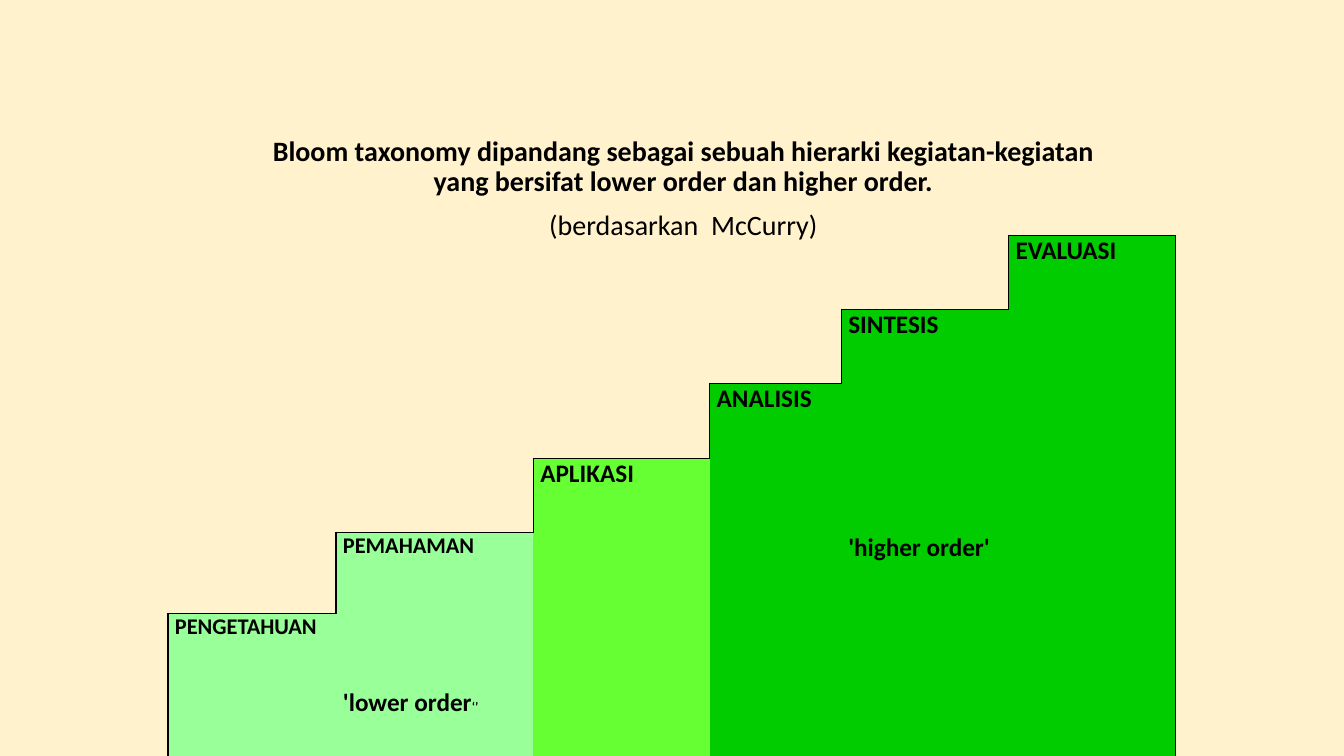
"""Build the slide that shows Bloom's taxonomy as a staircase table."""
import dataclasses

import lxml.etree
import pptx
import pptx.dml.color
import pptx.enum.text
import pptx.oxml.ns
import pptx.util

Pt = pptx.util.Pt
HUES = {"back": "FFF2CC", "ink": "000000", "pale": "99FF99",
        "lime": "66FF33", "green": "00CC00"}
TINTS = ["pale", "pale", "lime", "green", "green", "green"]
WIDTHS = [120, 141, 126, 94, 119.5, 119.5]
HEIGHTS = [53.1, 53.1, 53.1, 53.1, 57.8, 53.1, 53.1]
SIDES = {"lnL": (0, -1), "lnR": (0, 1), "lnT": (-1, 0), "lnB": (1, 0)}
HEAD = ("Bloom taxonomy dipandang sebagai sebuah hierarki kegiatan-kegiatan "
        "yang bersifat lower order dan higher order.")
CREDIT = "(berdasarkan  McCurry)"


@dataclasses.dataclass
class Label:
    row: int
    col: int
    text: str
    size: float = 18
    tail: str = ""


LABELS = [
    Label(0, 5, "EVALUASI"),
    Label(1, 4, "SINTESIS"),
    Label(2, 3, "ANALISIS"),
    Label(3, 2, "APLIKASI"),
    Label(4, 1, "PEMAHAMAN", 16),
    Label(5, 0, "PENGETAHUAN", 16),
    Label(4, 4, "'higher order'"),
    Label(6, 1, "'lower order", tail="‘’"),
]


def color(name: str) -> pptx.dml.color.RGBColor:
    return pptx.dml.color.RGBColor.from_string(HUES[name])


def style(run, size: float, bold: bool = True) -> None:
    run.font.name = "Calibri"
    run.font.size = Pt(size)
    run.font.bold = bold
    run.font.color.rgb = color("ink")


def solid(row: int, col: int) -> bool:
    return 0 <= row < len(HEIGHTS) and max(5 - row, 0) <= col < len(WIDTHS)


def border(cell, row: int, col: int) -> None:
    props = cell._tc.get_or_add_tcPr()
    name = pptx.oxml.ns.qn
    for spot, (side, (down, right)) in enumerate(SIDES.items()):
        line = lxml.etree.Element(name(f"a:{side}"), w=str(Pt(1)))
        if solid(row, col) != solid(row + down, col + right):
            fill = lxml.etree.SubElement(line, name("a:solidFill"))
            lxml.etree.SubElement(fill, name("a:srgbClr"), val=HUES["ink"])
        else:
            lxml.etree.SubElement(line, name("a:noFill"))
        props.insert(spot, line)


def write(cell, label: Label) -> None:
    cell.margin_left = cell.margin_right = Pt(5)
    cell.margin_top = cell.margin_bottom = Pt(0)
    para = cell.text_frame.paragraphs[0]
    para.text = label.text
    para.space_after = Pt(10)
    style(para.runs[0], label.size)
    if label.tail:
        tail = para.add_run()
        tail.text = label.tail
        style(tail, 9)


def add_head(slide) -> None:
    title = slide.shapes.title
    title.left, title.top = Pt(173.5), Pt(94.3)
    title.width, title.height = Pt(629.3), Pt(396.7)
    frame = title.text_frame
    frame.text = f"{HEAD}\n{CREDIT}"
    frame.word_wrap = True
    frame.auto_size = pptx.enum.text.MSO_AUTO_SIZE.NONE
    frame.vertical_anchor = pptx.enum.text.MSO_ANCHOR.TOP
    for para, bold in zip(frame.paragraphs, (True, False)):
        para.alignment = pptx.enum.text.PP_ALIGN.CENTER
        para.line_spacing = 0.9
        para.space_before = Pt(10)
        style(para.runs[0], 20, bold)


def add_stairs(slide) -> None:
    table = slide.shapes.add_table(
        len(HEIGHTS), len(WIDTHS), Pt(120), Pt(168),
        Pt(sum(WIDTHS)), Pt(sum(HEIGHTS))).table
    table.first_row = table.horz_banding = False
    for col, width in enumerate(WIDTHS):
        table.columns[col].width = Pt(width)
    for row, height in enumerate(HEIGHTS):
        table.rows[row].height = Pt(height)
        for col, tint in enumerate(TINTS):
            cell = table.cell(row, col)
            if solid(row, col):
                cell.fill.solid()
                cell.fill.fore_color.rgb = color(tint)
            else:
                cell.fill.background()
            border(cell, row, col)
    for label in LABELS:
        write(table.cell(label.row, label.col), label)


def main() -> None:
    deck = pptx.Presentation()
    deck.slide_width, deck.slide_height = Pt(960), Pt(540)
    slide = deck.slides.add_slide(deck.slide_layouts[5])
    slide.background.fill.solid()
    slide.background.fill.fore_color.rgb = color("back")
    add_head(slide)
    add_stairs(slide)
    deck.save("out.pptx")


if __name__ == "__main__":
    main()
